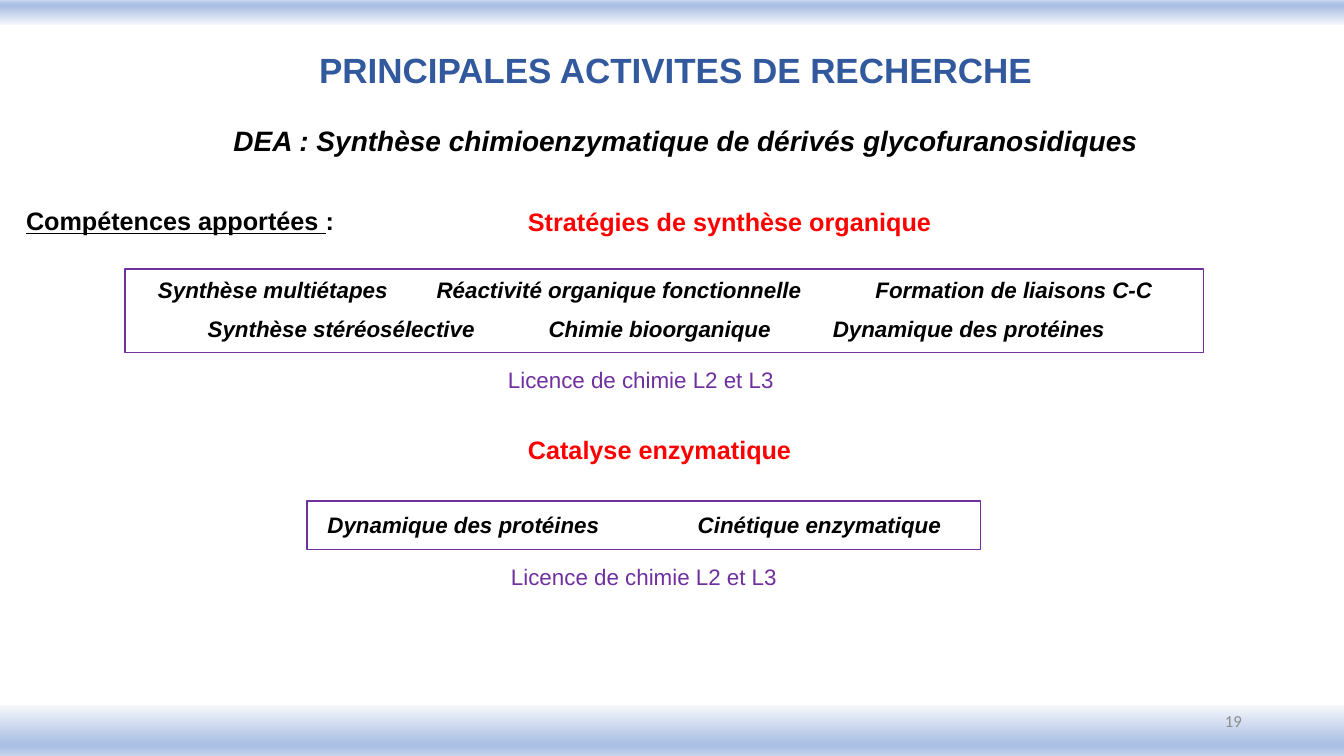
import pptx
import pptx.util
import pptx.dml.color
import pptx.enum.shapes
import pptx.enum.text
import pptx.oxml
import pptx.oxml.ns

Pt = pptx.util.Pt
RGBColor = pptx.dml.color.RGBColor
ALIGN = pptx.enum.text.PP_ALIGN
ANCHOR = pptx.enum.text.MSO_ANCHOR
RECTANGLE = pptx.enum.shapes.MSO_SHAPE.RECTANGLE

BLUE = RGBColor(0x32, 0x59, 0x9E)
BLACK = RGBColor(0, 0, 0)
RED = RGBColor(0xFF, 0, 0)
PURPLE = RGBColor(0x70, 0x30, 0xA0)
GREY = RGBColor(0x8C, 0x8C, 0x8C)
BAND_PALE = RGBColor(0xF6, 0xF8, 0xFC)
BAND_BLUE = RGBColor(0xAB, 0xC0, 0xE4)
BAND_END = RGBColor(0xC7, 0xD5, 0xED)
BAND_STOPS = [(0, BAND_PALE), (74, BAND_BLUE), (83, BAND_BLUE), (100, BAND_END)]

# Text formats
TITLE = {"size": Pt(25), "bold": True, "color": BLUE}
SUBTITLE = {"size": Pt(20), "bold": True, "italic": True, "color": BLACK}
LABEL = {"size": Pt(18), "bold": True, "color": BLACK}
THEME = LABEL | {"color": RED}
SKILL = {"size": Pt(16), "bold": True, "italic": True, "color": BLACK}
LEVEL = {"size": Pt(16), "color": PURPLE}
NUMBER = {"size": Pt(12), "name": "Calibri", "color": GREY}


def add_span(para, text, style):
    span = para.add_run()
    span.text = text
    for key, value in ({"name": "Arial"} | style).items():
        if key == "color":
            span.font.color.rgb = value
        else:
            setattr(span.font, key, value)


def set_tabs(para, stops):
    properties = para._p.get_or_add_pPr()
    tab_list = pptx.oxml.parse_xml(f"<a:tabLst {pptx.oxml.ns.nsdecls('a')}/>")
    for stop in stops:
        tab = tab_list.makeelement(pptx.oxml.ns.qn("a:tab"), {"pos": str(Pt(stop)), "algn": "l"})
        tab_list.append(tab)
    properties.append(tab_list)


def add_text(page, place, lines, align=ALIGN.LEFT, anchor=ANCHOR.TOP):
    """Each line is a pair: its (text, style) spans and its tab stops."""
    box = page.shapes.add_textbox(*map(Pt, place))
    frame = box.text_frame
    frame.word_wrap = True
    frame.vertical_anchor = anchor
    for index, (spans, stops) in enumerate(lines):
        para = frame.add_paragraph() if index else frame.paragraphs[0]
        para.alignment = align
        if index:
            para.space_before = Pt(9)
        if stops:
            set_tabs(para, stops)
        for text, style in spans:
            add_span(para, text, style)


def add_line(page, place, text, style, **layout):
    add_text(page, place, [([(text, style)], [])], **layout)


def add_rectangle(page, place):
    shape = page.shapes.add_shape(RECTANGLE, *map(Pt, place))
    shape.shadow.inherit = False
    return shape


def add_band(page, place, angle):
    band = add_rectangle(page, place)
    band.line.fill.background()
    band.fill.gradient()
    band.fill.gradient_angle = angle
    stop_list = band._element.spPr.find(".//" + pptx.oxml.ns.qn("a:gsLst"))
    for stop in list(stop_list):
        stop_list.remove(stop)
    for percent, color in BAND_STOPS:
        stop_list.append(pptx.oxml.parse_xml(
            f"<a:gs {pptx.oxml.ns.nsdecls('a')} pos='{percent * 1000}'>"
            f"<a:srgbClr val='{color}'/></a:gs>"))


def add_outline(page, place):
    outline = add_rectangle(page, place)
    outline.fill.background()
    outline.line.color.rgb = PURPLE
    outline.line.width = Pt(1)


def main():
    deck = pptx.Presentation()
    deck.slide_width, deck.slide_height = Pt(960), Pt(540)
    page = deck.slides.add_slide(deck.slide_layouts[6])

    # Top and bottom bands
    add_band(page, (0, 0, 960, 18), 90)
    add_band(page, (0, 503.5, 960, 36.5), 270)

    # Headings
    add_line(page, (207.4, 22.3, 550, 55.4), "PRINCIPALES ACTIVITES DE RECHERCHE",
             TITLE, align=ALIGN.CENTER, anchor=ANCHOR.MIDDLE)
    add_line(page, (154, 85, 671.8, 31.5),
             "DEA : Synthèse chimioenzymatique de dérivés glycofuranosidiques",
             SUBTITLE, align=ALIGN.CENTER)
    add_text(page, (11.5, 143.3, 300, 29),
             [([("Compétences apportées ", LABEL | {"underline": True}), (":", LABEL)], [])])

    # Organic synthesis
    add_line(page, (370, 144, 337.7, 29), "Stratégies de synthèse organique", THEME)
    add_outline(page, (89.3, 192.2, 770.4, 59.8))
    add_text(page, (105.8, 193.7, 770.4, 55.4), [
        ([("Synthèse multiétapes\tRéactivité organique fonctionnelle\tFormation de liaisons C-C",
           SKILL)], [199, 512.5]),
        ([("\tSynthèse stéréosélective\tChimie bioorganique\tDynamique des protéines",
           SKILL)], [35.5, 279, 482]),
    ])
    add_line(page, (355.7, 257.8, 215.3, 26.6), "Licence de chimie L2 et L3", LEVEL)

    # Enzymatic catalysis
    add_line(page, (370, 306.7, 337.7, 29), "Catalyse enzymatique", THEME)
    add_outline(page, (219.3, 357.8, 481, 34.6))
    add_text(page, (226.8, 361.4, 493.2, 26.6),
             [([("Dynamique des protéines\tCinétique enzymatique", SKILL)], [264.5])])
    add_line(page, (308, 398.9, 303.8, 26.6), "Licence de chimie L2 et L3", LEVEL,
             align=ALIGN.CENTER)

    # Page number
    add_line(page, (678.2, 500.5, 216, 28.8), "19", NUMBER,
             align=ALIGN.RIGHT, anchor=ANCHOR.MIDDLE)

    deck.save("out.pptx")


if __name__ == "__main__":
    main()
